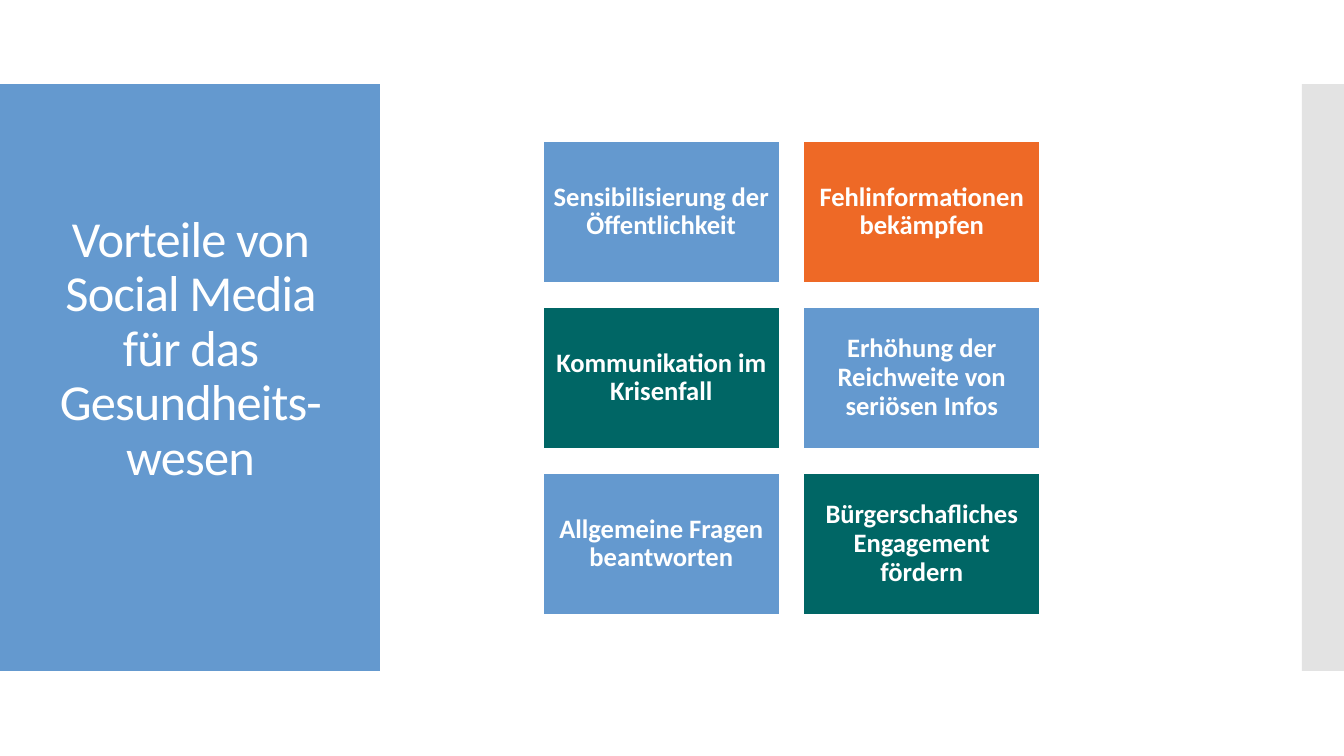
from pptx import Presentation
from pptx import util as u
from pptx.dml.color import RGBColor
from pptx.enum import shapes, text
from pptx.oxml.ns import qn
from lxml import etree

PX = 914400 / 100.8
BLUE, ORANGE, GREEN, GREY, WHITE = "6499CF", "EE6926", "006665", "C8C8C8", "FFFFFF"
TILES = [
    ("Sensibilisierung der Öffentlichkeit", BLUE),
    ("Fehlinformationen bekämpfen", ORANGE),
    ("Kommunikation im Krisenfall", GREEN),
    ("Erhöhung der Reichweite von seriösen Infos", BLUE),
    ("Allgemeine Fragen beantworten", BLUE),
    ("Bürgerschafliches Engagement fördern", GREEN),
]


def px(n):
    return u.Emu(round(n * PX))


def paint(color, value):
    color.rgb = RGBColor.from_string(value)


def write(sp, words, size, bold=False, spacing=None, insets=(8, 8, 8, 8)):
    tf = sp.text_frame
    tf.word_wrap = True
    tf.auto_size = text.MSO_AUTO_SIZE.NONE
    tf.vertical_anchor = text.MSO_ANCHOR.MIDDLE
    tf.margin_left, tf.margin_top, tf.margin_right, tf.margin_bottom = map(px, insets)
    p = tf.paragraphs[0]
    p.alignment = text.PP_ALIGN.CENTER
    p.line_spacing = 0.9
    r = p.add_run()
    r.text = words
    r.font.name, r.font.size, r.font.bold = "Calibri", u.Pt(size), bold
    paint(r.font.color, WHITE)
    if spacing is not None:
        r._r.get_or_add_rPr().set("spc", str(spacing))


def rect(s, box, fill, line=None, alpha=None):
    sp = s.shapes.add_shape(shapes.MSO_SHAPE.RECTANGLE, *map(px, box))
    sp.shadow.inherit = False
    sp.fill.solid()
    paint(sp.fill.fore_color, fill)
    if line:
        paint(sp.line.color, line)
        sp.line.width = u.Pt(0.85)
    else:
        sp.line.fill.background()
    if alpha is not None:
        clr = sp._element.spPr.find(qn("a:solidFill")).find(qn("a:srgbClr"))
        etree.SubElement(clr, qn("a:alpha")).set("val", str(alpha * 1000))
    return sp


def title_panel(s, box):
    x, y, w, h = box
    rect(s, box, BLUE)
    title = s.shapes.title
    s.shapes._spTree.append(title._element)
    title.left, title.top = px(x + 28), px(y + 40)
    title.width, title.height = px(w - 55), px(h - 81)
    write(title, "Vorteile von Social Media für das Gesundheits-wesen", 36,
          spacing=-60, insets=(10, 5, 10, 59))


def benefit_grid(s, box, cols=2, rows=3, gap=24):
    x, y, w, h = box
    tile_w = (w - gap * (cols - 1)) / cols
    tile_h = (h - gap * (rows - 1)) / rows
    for i, (words, fill) in enumerate(TILES):
        row, col = divmod(i, cols)
        tile = (x + col * (tile_w + gap), y + row * (tile_h + gap), tile_w, tile_h)
        write(rect(s, tile, fill, line=WHITE), words, 19, bold=True)


def main():
    prs = Presentation()
    prs.slide_width, prs.slide_height = px(1344), px(756)
    s = prs.slides.add_slide(prs.slide_layouts[5])
    title_panel(s, (0, 84, 380, 587))
    rect(s, (1302, 84, 42, 587), GREY, alpha=50)
    benefit_grid(s, (543, 141, 497, 474))
    prs.save("out.pptx")


if __name__ == "__main__":
    main()
